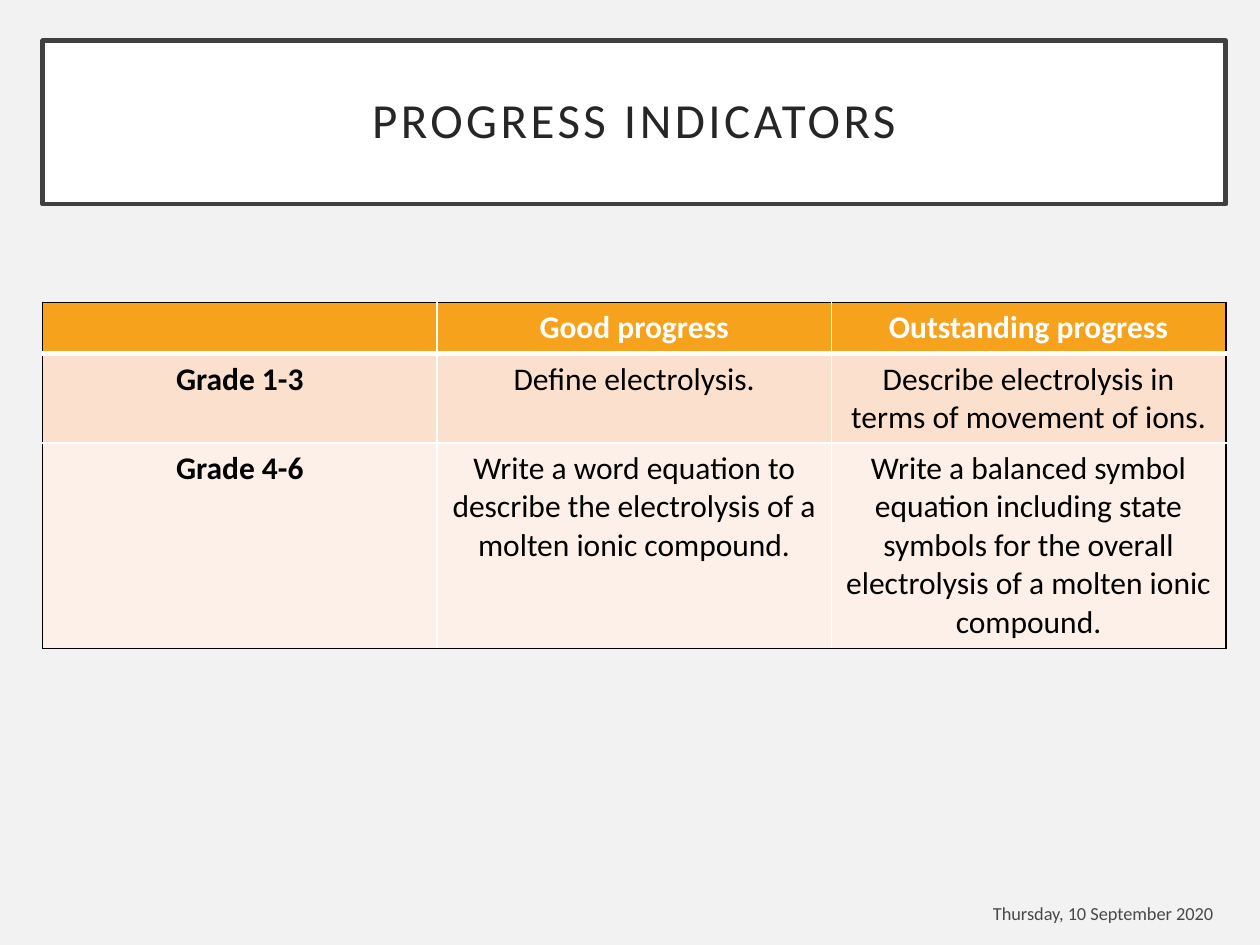
from lxml import etree
from pptx import Presentation
from pptx.dml.color import RGBColor
from pptx.enum.shapes import MSO_SHAPE
from pptx.enum.text import MSO_ANCHOR, PP_ALIGN
from pptx.oxml.ns import qn
from pptx.util import Cm, Pt

RECTANGLE = MSO_SHAPE.RECTANGLE
MIDDLE = MSO_ANCHOR.MIDDLE
CENTER, RIGHT = PP_ALIGN.CENTER, PP_ALIGN.RIGHT
FONT = "Calibri"
BLACK, WHITE = "000000", "FFFFFF"
ROW_FILLS = ["F6A21D", "FBE0CD", "FDF0E8"]
ROW_HEIGHTS = [1.03, 1.8, 4.14]
COLUMN_WIDTH = 7.95
PROGRESS = [
    ["", "Good progress", "Outstanding progress"],
    ["Grade 1-3", "Define electrolysis.",
     "Describe electrolysis in terms of movement of ions."],
    ["Grade 4-6",
     "Write a word equation to describe the electrolysis of a molten ionic compound.",
     "Write a balanced symbol equation including state symbols for the overall "
     "electrolysis of a molten ionic compound."],
]


def color(value):
    return RGBColor.from_string(value)


def fill_solid(fill, value):
    fill.solid()
    fill.fore_color.rgb = color(value)


def write(text_frame, text, size, value, alignment, bold=False):
    """Set one paragraph of text and return its run."""
    text_frame.text = text
    paragraph = text_frame.paragraphs[0]
    paragraph.alignment = alignment
    paragraph.font.size = Pt(size)
    if not text:
        return None
    run = paragraph.runs[0]
    run.font.name = FONT
    run.font.size = Pt(size)
    run.font.bold = bold
    run.font.color.rgb = color(value)
    return run


def add_title(slide, text):
    shape = slide.shapes.add_shape(RECTANGLE, Cm(0.86), Cm(0.82), Cm(23.85), Cm(3.3))
    shape.shadow.inherit = False
    fill_solid(shape.fill, WHITE)
    shape.line.color.rgb = color("404040")
    shape.line.width = Pt(2.5)
    frame = shape.text_frame
    frame.word_wrap = True
    frame.vertical_anchor = MIDDLE
    frame.margin_left = frame.margin_right = Cm(0.51)
    frame.margin_top = frame.margin_bottom = Cm(0.51)
    run = write(frame, text, 28, "262626", CENTER)
    frame.paragraphs[0].line_spacing = 0.9
    run.font._element.set("spc", "200")


def set_borders(cell, borders):
    """Draw borders given as (tag, colour, points) in schema order, before the fill."""
    properties = cell._tc.get_or_add_tcPr()
    for position, (tag, value, points) in enumerate(borders):
        line = etree.Element(qn(f"a:{tag}"), w=str(Pt(points)))
        fill = etree.SubElement(line, qn("a:solidFill"))
        etree.SubElement(fill, qn("a:srgbClr"), val=value)
        properties.insert(position, line)


def add_progress_table(slide, rows):
    last_row, last_column = len(rows) - 1, len(rows[0]) - 1
    table = slide.shapes.add_table(
        len(rows), len(rows[0]), Cm(0.86), Cm(6.1),
        Cm(COLUMN_WIDTH * len(rows[0])), Cm(sum(ROW_HEIGHTS))).table
    for column in table.columns:
        column.width = Cm(COLUMN_WIDTH)
    for row_index, texts in enumerate(rows):
        table.rows[row_index].height = Cm(ROW_HEIGHTS[row_index])
        is_header = row_index == 0
        for column_index, text in enumerate(texts):
            cell = table.cell(row_index, column_index)
            fill_solid(cell.fill, ROW_FILLS[row_index])
            write(cell.text_frame, text, 18, WHITE if is_header else BLACK,
                  CENTER, bold=is_header or column_index == 0)
            set_borders(cell, [
                ("lnL", BLACK if column_index == 0 else WHITE, 1),
                ("lnR", BLACK if column_index == last_column else WHITE, 1),
                ("lnT", BLACK if is_header else WHITE, 3 if row_index == 1 else 1),
                ("lnB", BLACK if row_index == last_row else WHITE, 3 if is_header else 1),
            ])


def add_date(slide, text):
    text_box = slide.shapes.add_textbox(Cm(18.97), Cm(17.96), Cm(5.74), Cm(0.89))
    frame = text_box.text_frame
    frame.word_wrap = True
    frame.vertical_anchor = MIDDLE
    run = write(frame, text, 10.5, BLACK, RIGHT)
    text_color = run.font._element.find(f".//{qn('a:srgbClr')}")
    etree.SubElement(text_color, qn("a:alpha"), val="70000")


def main():
    presentation = Presentation()
    presentation.slide_width, presentation.slide_height = Cm(25.4), Cm(19.05)
    slide = presentation.slides.add_slide(presentation.slide_layouts[6])
    fill_solid(slide.background.fill, "F2F2F2")
    add_title(slide, "PROGRESS INDICATORS")
    add_progress_table(slide, PROGRESS)
    add_date(slide, "Thursday, 10 September 2020")
    presentation.save("out.pptx")


if __name__ == "__main__":
    main()
